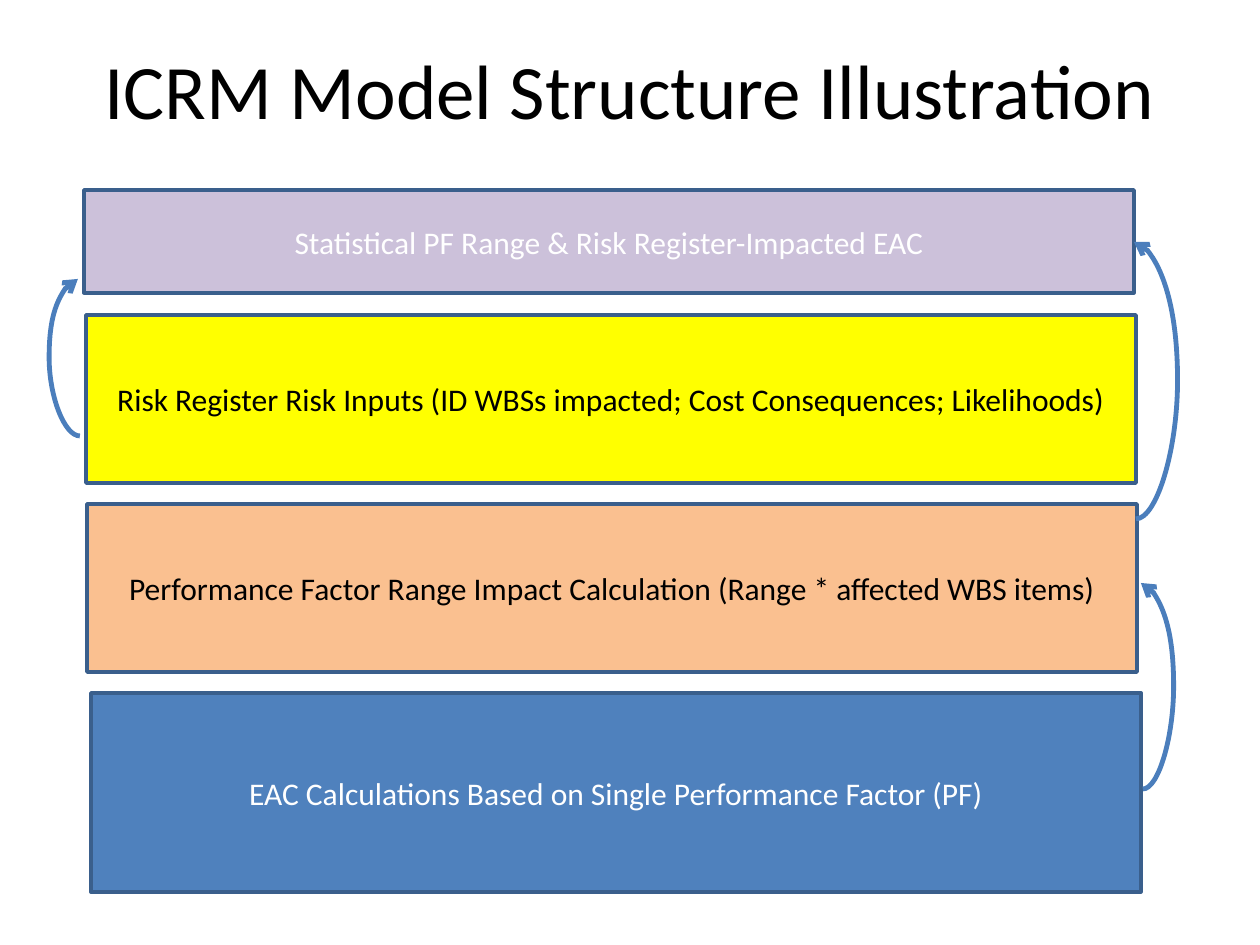
from dataclasses import dataclass

from lxml import etree
from pptx import Presentation
from pptx import util as u
from pptx.dml.color import RGBColor
from pptx.enum import shapes, text
from pptx.oxml.ns import qn

PX_PER_INCH = 126
FONT = "Calibri"

BLACK = RGBColor(0x00, 0x00, 0x00)
WHITE = RGBColor(0xFF, 0xFF, 0xFF)
BLUE = RGBColor(0x4F, 0x81, 0xBD)
LILAC = RGBColor(0xCC, 0xC1, 0xDA)
YELLOW = RGBColor(0xFF, 0xFF, 0x00)
PEACH = RGBColor(0xFA, 0xC0, 0x90)
OUTLINE = RGBColor(0x3A, 0x5F, 0x8C)
ARROW = RGBColor(0x4B, 0x7E, 0xBC)

LAYER_WIDTH = 1050


@dataclass
class Layer:
    label: str
    left: int
    top: int
    height: int
    fill: RGBColor
    ink: RGBColor


@dataclass
class Feed:
    """A curved arrow from one layer up to another, bulging out to bulge_x."""
    start: tuple[int, int]
    end: tuple[int, int]
    bulge_x: int


LAYERS = [
    Layer("EAC Calculations Based on Single Performance Factor (PF)",
          91, 693, 199, BLUE, WHITE),
    Layer("Statistical PF Range & Risk Register-Impacted EAC",
          84, 190, 103, LILAC, WHITE),
    Layer("Risk Register Risk Inputs (ID WBSs impacted; Cost Consequences; Likelihoods)",
          86, 315, 168, YELLOW, BLACK),
    Layer("Performance Factor Range Impact Calculation (Range * affected WBS items)",
          87, 504, 168, PEACH, BLACK),
]

FEEDS = [
    Feed((1136, 519), (1134, 242), 1178),
    Feed((80, 436), (78, 279), 49),
    Feed((1143, 789), (1141, 583), 1174),
]


def px(length: int) -> u.Emu:
    return u.Emu(round(length * 914400 / PX_PER_INCH))


def write(frame, words: str, size: int, ink: RGBColor) -> None:
    frame.word_wrap = True
    frame.vertical_anchor = text.MSO_ANCHOR.MIDDLE
    paragraph = frame.paragraphs[0]
    paragraph.alignment = text.PP_ALIGN.CENTER
    run = paragraph.add_run()
    run.text = words
    run.font.name = FONT
    run.font.size = u.Pt(size)
    run.font.color.rgb = ink


def draw_layer(slide, layer: Layer) -> None:
    box = slide.shapes.add_shape(
        shapes.MSO_SHAPE.RECTANGLE,
        px(layer.left), px(layer.top), px(LAYER_WIDTH), px(layer.height))
    box.shadow.inherit = False
    box.fill.solid()
    box.fill.fore_color.rgb = layer.fill
    box.line.color.rgb = OUTLINE
    box.line.width = u.Pt(2)
    write(box.text_frame, layer.label, 18, layer.ink)


def draw_feed(slide, feed: Feed) -> None:
    curve = slide.shapes.add_connector(
        shapes.MSO_CONNECTOR.CURVE, *map(px, feed.start + feed.end))
    curve.line.color.rgb = ARROW
    curve.line.width = u.Pt(2.75)
    properties = curve.element.spPr

    # Bulge, as a share of the horizontal run
    share = (feed.bulge_x - feed.start[0]) / (feed.end[0] - feed.start[0])
    guides = properties.find(qn("a:prstGeom")).find(qn("a:avLst"))
    etree.SubElement(guides, qn("a:gd"), name="adj1",
                     fmla=f"val {round(share * 100000)}")

    # Arrowhead, and no shadow
    etree.SubElement(properties.find(qn("a:ln")), qn("a:tailEnd"), type="arrow")
    etree.SubElement(properties, qn("a:effectLst"))


def main() -> None:
    deck = Presentation()
    deck.slide_width, deck.slide_height = u.Inches(10), u.Inches(7.5)
    slide = deck.slides.add_slide(deck.slide_layouts.get_by_name("Title Only"))

    # Title
    title = slide.shapes.title
    title.left, title.top, title.width, title.height = map(px, (63, 10, 1134, 157))
    write(title.text_frame, "ICRM Model Structure Illustration", 44, BLACK)

    # Model layers
    for layer in LAYERS:
        draw_layer(slide, layer)

    # Arrows between layers
    for feed in FEEDS:
        draw_feed(slide, feed)

    deck.save("out.pptx")


if __name__ == "__main__":
    main()
